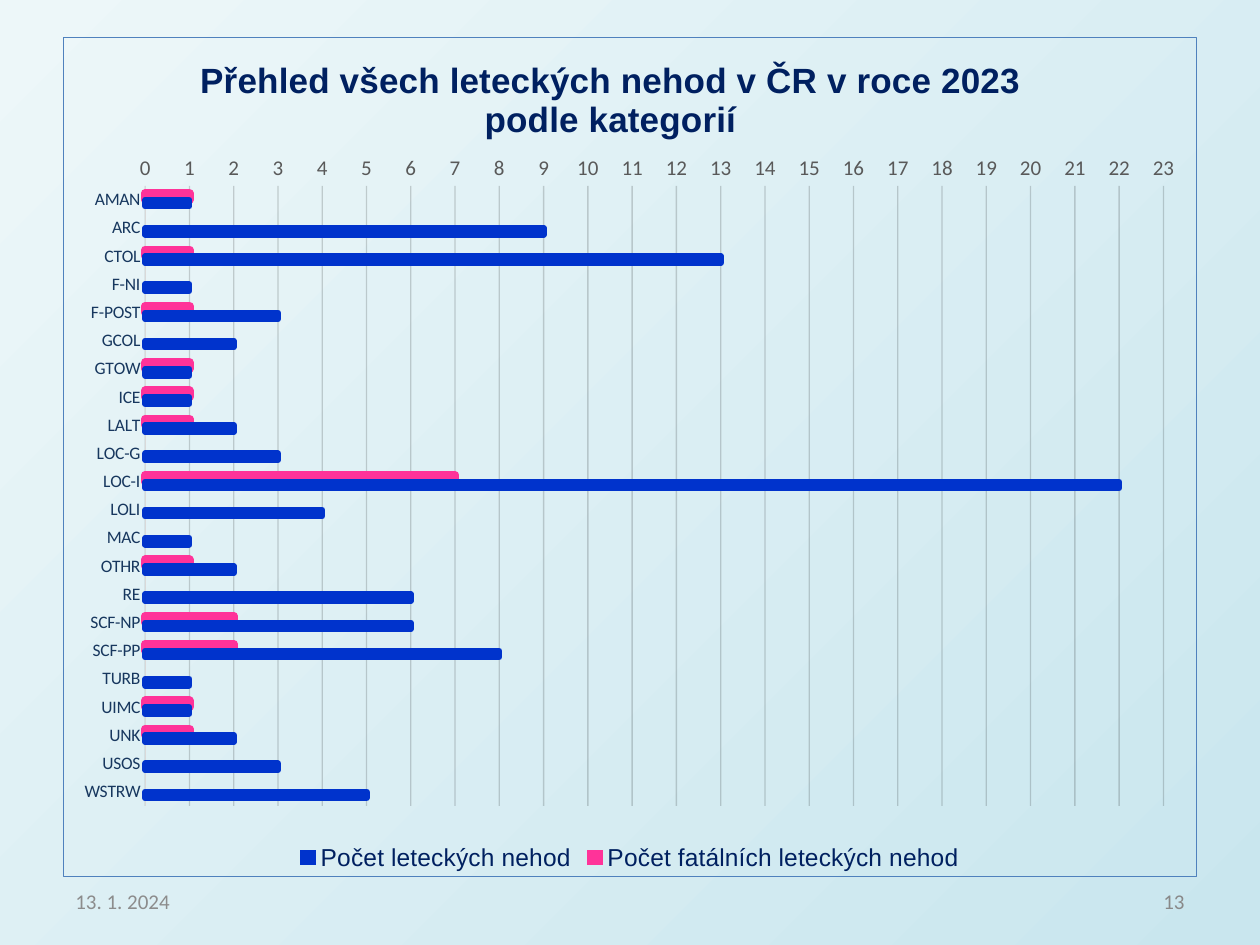
from lxml import etree
from pptx import Presentation
from pptx.chart.data import CategoryChartData
from pptx.dml.color import RGBColor
from pptx.enum.chart import XL_CHART_TYPE, XL_LEGEND_POSITION, XL_TICK_MARK
from pptx.enum.text import MSO_ANCHOR, PP_ALIGN
from pptx.oxml import parse_xml
from pptx.oxml.ns import nsdecls, qn
from pptx.util import Cm, Pt

BAR_CLUSTERED = XL_CHART_TYPE.BAR_CLUSTERED
BOTTOM = XL_LEGEND_POSITION.BOTTOM
NO_TICK = XL_TICK_MARK.NONE
LEFT, RIGHT = PP_ALIGN.LEFT, PP_ALIGN.RIGHT
MIDDLE = MSO_ANCHOR.MIDDLE

PALE = RGBColor(0xED, 0xF7, 0xF9)
AQUA = RGBColor(0xC9, 0xE6, 0xEE)
NAVY = RGBColor(0x00, 0x20, 0x60)
SLATE = RGBColor(0x17, 0x37, 0x5E)
BLUE = RGBColor(0x00, 0x33, 0xCC)
PINK = RGBColor(0xFF, 0x33, 0x99)
STEEL = RGBColor(0x4F, 0x81, 0xBD)
BLACK = RGBColor(0x00, 0x00, 0x00)
DARK_GREY = RGBColor(0x59, 0x59, 0x59)
DATE_GREY = RGBColor(0x8C, 0x8C, 0x8C)
NUMBER_GREY = RGBColor(0x89, 0x89, 0x89)
LIGHT_GREY = RGBColor(0xD9, 0xD9, 0xD9)

TITLE = "Přehled všech leteckých nehod v ČR v roce 2023 podle kategorií"
FATAL = "Počet fatálních leteckých nehod"
ALL = "Počet leteckých nehod"

# category, fatal accidents, all accidents
ACCIDENTS = [
    ("AMAN", 1, 1), ("ARC", None, 9), ("CTOL", 1, 13), ("F-NI", None, 1),
    ("F-POST", 1, 3), ("GCOL", None, 2), ("GTOW", 1, 1), ("ICE", 1, 1),
    ("LALT", 1, 2), ("LOC-G", None, 3), ("LOC-I", 7, 22), ("LOLI", None, 4),
    ("MAC", None, 1), ("OTHR", 1, 2), ("RE", None, 6), ("SCF-NP", 2, 6),
    ("SCF-PP", 2, 8), ("TURB", None, 1), ("UIMC", 1, 1), ("UNK", 1, 2),
    ("USOS", None, 3), ("WSTRW", None, 5),
]


def format_font(font, size, color, name="Calibri", bold=False):
    font.size, font.name, font.bold = Pt(size), name, bold
    font.color.rgb = color


def write_text(text_frame, text, align=LEFT, **font_format):
    text_frame.text = text
    paragraph = text_frame.paragraphs[0]
    paragraph.alignment = align
    format_font(paragraph.runs[0].font, **font_format)


def set_layout(element, position, **values):
    """Place a chart part by fractions of the chart area."""
    for old in element.findall(qn("c:layout")):
        element.remove(old)
    layout = parse_xml(f"<c:layout {nsdecls('c')}><c:manualLayout/></c:layout>")
    for tag, value in values.items():
        etree.SubElement(layout[0], qn(f"c:{tag}")).set("val", str(value))
    element.insert(position, layout)


class SlideBuilder:
    font_name = "Calibri"

    def __init__(self, slide):
        self.slide = slide

    def background(self, start, end):
        fill = self.slide.background.fill
        fill.gradient()
        fill.gradient_angle = 315
        for stop, color, position in zip(fill.gradient_stops, (start, end), (0, 1)):
            stop.color.rgb = color
            stop.position = position

    def footer(self, text, left, color, align=LEFT):
        box = self.slide.shapes.add_textbox(Cm(left), Cm(17.65), Cm(5.92), Cm(1.02))
        box.text_frame.word_wrap = True
        box.text_frame.vertical_anchor = MIDDLE
        write_text(box.text_frame, text, align, size=12, color=color, name=self.font_name)

    def bar_chart(self, title, rows, series_styles):
        data = CategoryChartData()
        names, *columns = zip(*rows)
        data.categories = names
        for (name, _, _), values in zip(series_styles, columns):
            data.add_series(name, values)
        frame = self.slide.shapes.add_chart(
            BAR_CLUSTERED, Cm(1.27), Cm(0.74), Cm(22.86), Cm(16.94), data)
        chart = frame.chart
        format_font(chart.font, 10, BLACK, self.font_name)
        self.chart_title(chart, title)
        self.chart_border(chart, STEEL)
        self.chart_axes(chart)

        plot = chart.plots[0]
        plot.gap_width, plot.overlap = 230, 0
        plot.vary_by_categories = False
        for series, (_, color, width) in zip(plot.series, series_styles):
            series.format.fill.solid()
            series.format.fill.fore_color.rgb = color
            line = series.format.line
            line.color.rgb, line.width = color, Pt(width)
            etree.SubElement(series.format.line._get_or_add_ln(), qn("a:round"))
        set_layout(chart.element.find(f".//{qn('c:plotArea')}"), 0, layoutTarget="inner",
                   xMode="edge", yMode="edge", x=0.072, y=0.177, w=0.899, h=0.739)

        chart.has_legend = True
        chart.legend.position = BOTTOM
        chart.legend.include_in_layout = False
        format_font(chart.legend.font, 14, NAVY, "Arial")

    def chart_title(self, chart, title):
        chart.has_title = True
        write_text(chart.chart_title.text_frame, title, PP_ALIGN.CENTER,
                   size=20, color=NAVY, name="Arial", bold=True)
        set_layout(chart.element.find(f".//{qn('c:title')}"), 1,
                   xMode="edge", yMode="edge", x=0.115, y=0.017)

    def chart_border(self, chart, color):
        border = parse_xml(
            f'<c:spPr {nsdecls("c", "a")}><a:noFill/><a:ln w="{Pt(0.75)}"><a:solidFill>'
            f'<a:srgbClr val="{color}"/></a:solidFill></a:ln></c:spPr>')
        chart.element.find(qn("c:chart")).addnext(border)

    def chart_axes(self, chart):
        categories, values = chart.category_axis, chart.value_axis
        for axis, size, color in ((categories, 10, SLATE), (values, 12, DARK_GREY)):
            axis.major_tick_mark = axis.minor_tick_mark = NO_TICK
            format_font(axis.tick_labels.font, size, color, self.font_name)
        categories.reverse_order = True
        categories.format.line.color.rgb = LIGHT_GREY
        categories.format.line.width = Pt(0.75)
        values.minimum_scale, values.maximum_scale, values.major_unit = 0, 23, 1
        values.format.line.fill.background()
        values.has_major_gridlines = True
        grid = values.major_gridlines.format.line
        grid.color.rgb, grid.width = BLACK, Pt(0.75)
        grid_color = values.major_gridlines._xAx.find(
            f"{qn('c:majorGridlines')}//{qn('a:srgbClr')}")
        etree.SubElement(grid_color, qn("a:alpha")).set("val", "17000")


def main():
    presentation = Presentation()
    presentation.slide_width, presentation.slide_height = Cm(25.4), Cm(19.05)
    blank_layout = presentation.slide_layouts[6]
    builder = SlideBuilder(presentation.slides.add_slide(blank_layout))
    builder.background(PALE, AQUA)
    builder.footer("13. 1. 2024", 1.27, DATE_GREY)
    builder.footer("13", 18.21, NUMBER_GREY, RIGHT)
    builder.bar_chart(TITLE, ACCIDENTS, [(FATAL, PINK, 4.75), (ALL, BLUE, 3.5)])
    presentation.save("out.pptx")


if __name__ == "__main__":
    main()
